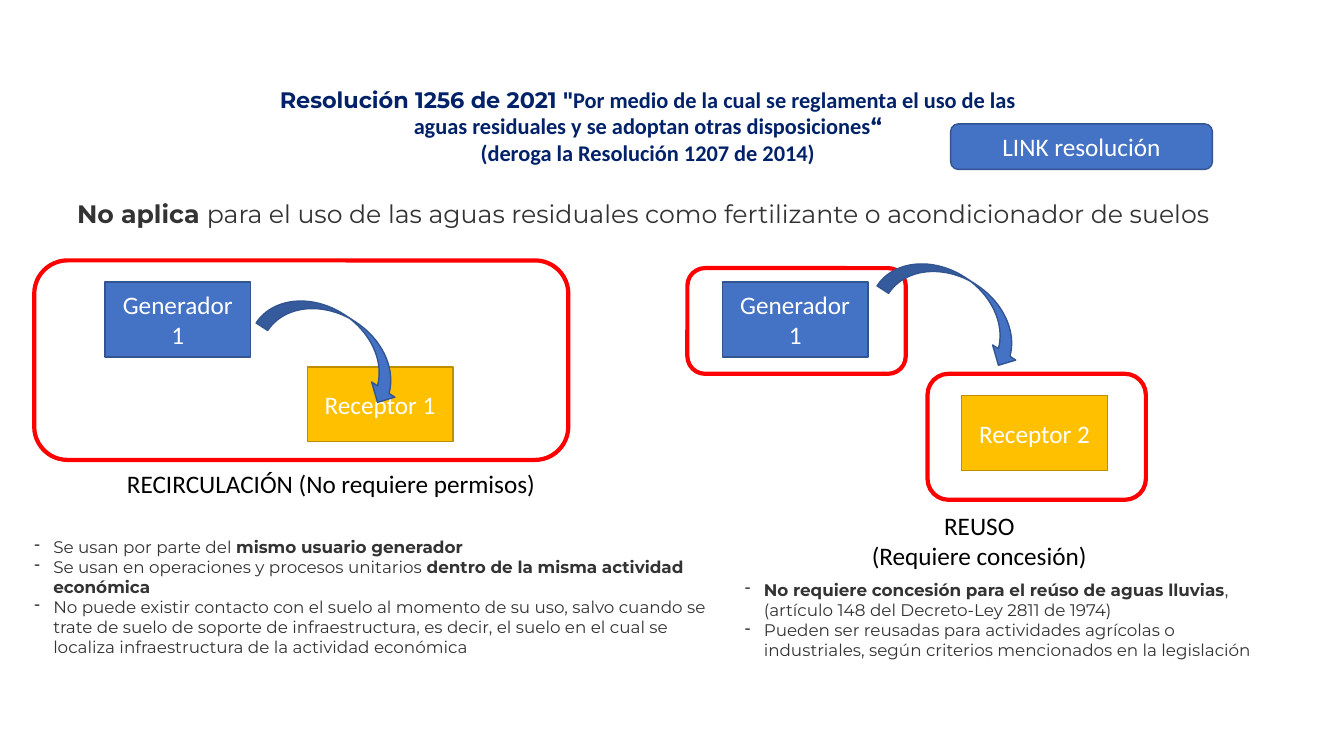
from lxml import etree
from pptx import Presentation
from pptx.dml.color import RGBColor
from pptx.enum import shapes, text
from pptx.oxml.ns import qn
from pptx.util import Pt

THEME = {
    "navy": "012169", "gray": "333333", "black": "000000", "white": "FFFFFF",
    "blue": "4472C4", "blue_edge": "325491", "gold": "FFC000", "gold_edge": "BD8E00",
    "red": "FF0000", "body": "Calibri", "accent": "Montserrat",
    "title": 16, "label": 18, "detail": 12,
}

# Places are (left, top, width, height) in points.
# Each paragraph is a list of runs: (words, bold, font key).
TITLE = [
    [("Resolución 1256 de 2021 \"", True, "accent"),
     ("Por medio de la cual se reglamenta el uso de las aguas residuales "
      "y se adoptan otras disposiciones", True, "body"),
     ("“", True, "accent")],
    [("(deroga la Resolución 1207 de 2014)", True, "body")],
]
SCOPE = [[
    ("No aplica ", True, "accent"),
    ("para el uso de las aguas residuales como fertilizante o acondicionador de suelos",
     False, "accent"),
]]
RECIRCULATION = [
    [("Se usan por parte del ", False, "accent"),
     ("mismo usuario generador", True, "accent")],
    [("Se usan en operaciones y procesos unitarios ", False, "accent"),
     ("dentro de la misma actividad económica", True, "accent")],
    [("No puede existir contacto con el suelo al momento de su uso, salvo cuando se "
      "trate de suelo de soporte de infraestructura, es decir, el suelo en el cual se "
      "localiza infraestructura de la actividad económica", False, "accent")],
]
REUSE = [
    [("No requiere concesión para el reúso de aguas lluvias", True, "accent"),
     (", (artículo 148 del Decreto-Ley 2811 de 1974)", False, "accent")],
    [("Pueden ser reusadas para actividades agrícolas o industriales, "
      "según criterios mencionados en la legislación", False, "accent")],
]
FRAMES = [(491, 191.5, 156, 75.5), (24.5, 186, 381.5, 142.5), (662.5, 267, 156, 90)]
ACTORS = [  # lines, left, top, colour
    (["Generador", "1"], 75, 201.5, "blue"),
    (["Receptor 1"], 219.5, 262, "gold"),
    (["Generador", "1"], 516, 201.5, "blue"),
    (["Receptor 2"], 687, 282.5, "gold"),
]
ACTOR_SIZE = (104, 53.5)
ARROWS = [(184.5, 225.5), (628, 199)]
ARROW_SIZE = (113.5, 39.5)
ARROW_TURN = 33.2
CAPTIONS = [
    (["RECIRCULACIÓN (No requiere permisos)"], (75, 331, 323, 29)),
    (["REUSO", "(Requiere concesión)"], (580.5, 361, 238, 51)),
]
BUTTON = ("LINK resolución", (679, 88.5, 187, 32.5))
INDENT = 13.5

deck = Presentation()
deck.slide_width, deck.slide_height = Pt(960), Pt(540)
page = deck.slides.add_slide(deck.slide_layouts[6])


def color(key):
    return RGBColor.from_string(THEME[key])


def plain(lines):
    return [[(line, False, "body")] for line in lines]


def write(shape, paragraphs, size, ink, align="CENTER", anchor="MIDDLE", dashes=False):
    frame = shape.text_frame
    frame.word_wrap = True
    frame.vertical_anchor = text.MSO_ANCHOR[anchor]
    for index, runs in enumerate(paragraphs):
        para = frame.add_paragraph() if index else frame.paragraphs[0]
        para.alignment = text.PP_ALIGN[align]
        if dashes:
            props = para._p.get_or_add_pPr()
            props.set("marL", str(Pt(INDENT)))
            props.set("indent", str(-Pt(INDENT)))
            etree.SubElement(props, qn("a:buChar")).set("char", "-")
        for words, bold, face in runs:
            span = para.add_run()
            span.text = words
            look = {"name": THEME[face], "size": Pt(THEME[size]), "bold": bold}
            for name, value in look.items():
                setattr(span.font, name, value)
            span.font.color.rgb = color(ink)


def add_text(place, paragraphs, size, ink, **layout):
    box = page.shapes.add_textbox(*map(Pt, place))
    write(box, paragraphs, size, ink, **layout)


def add_block(kind, place, fill, edge, weight=1):
    block = page.shapes.add_shape(shapes.MSO_SHAPE[kind], *map(Pt, place))
    block.shadow.inherit = False
    block.fill.solid()
    block.fill.fore_color.rgb = color(fill)
    block.line.color.rgb = color(edge)
    block.line.width = Pt(weight)
    return block


for place in FRAMES:
    add_block("ROUNDED_RECTANGLE", place, "white", "red", 3)
for lines, left, top, fill in ACTORS:
    actor = add_block("RECTANGLE", (left, top, *ACTOR_SIZE), fill, fill + "_edge")
    write(actor, plain(lines), "label", "white")
for corner in ARROWS:
    arrow = add_block("CURVED_DOWN_ARROW", (*corner, *ARROW_SIZE), "blue", "blue_edge")
    arrow.rotation = ARROW_TURN

add_text((182, 52.5, 561.5, 75), TITLE, "title", "navy")
add_text((48, 138, 864, 29), SCOPE, "label", "gray", align="LEFT", anchor="TOP")
for lines, place in CAPTIONS:
    add_text(place, plain(lines), "label", "black", anchor="TOP")
for place, details in [((17.5, 379.5, 507, 94.5), RECIRCULATION),
                       ((525, 410.5, 387.5, 65.5), REUSE)]:
    add_text(place, details, "detail", "gray", align="LEFT", anchor="TOP", dashes=True)

label, place = BUTTON
button = add_block("ROUNDED_RECTANGLE", place, "blue", "blue_edge")
write(button, plain([label]), "label", "white")

deck.save("out.pptx")
